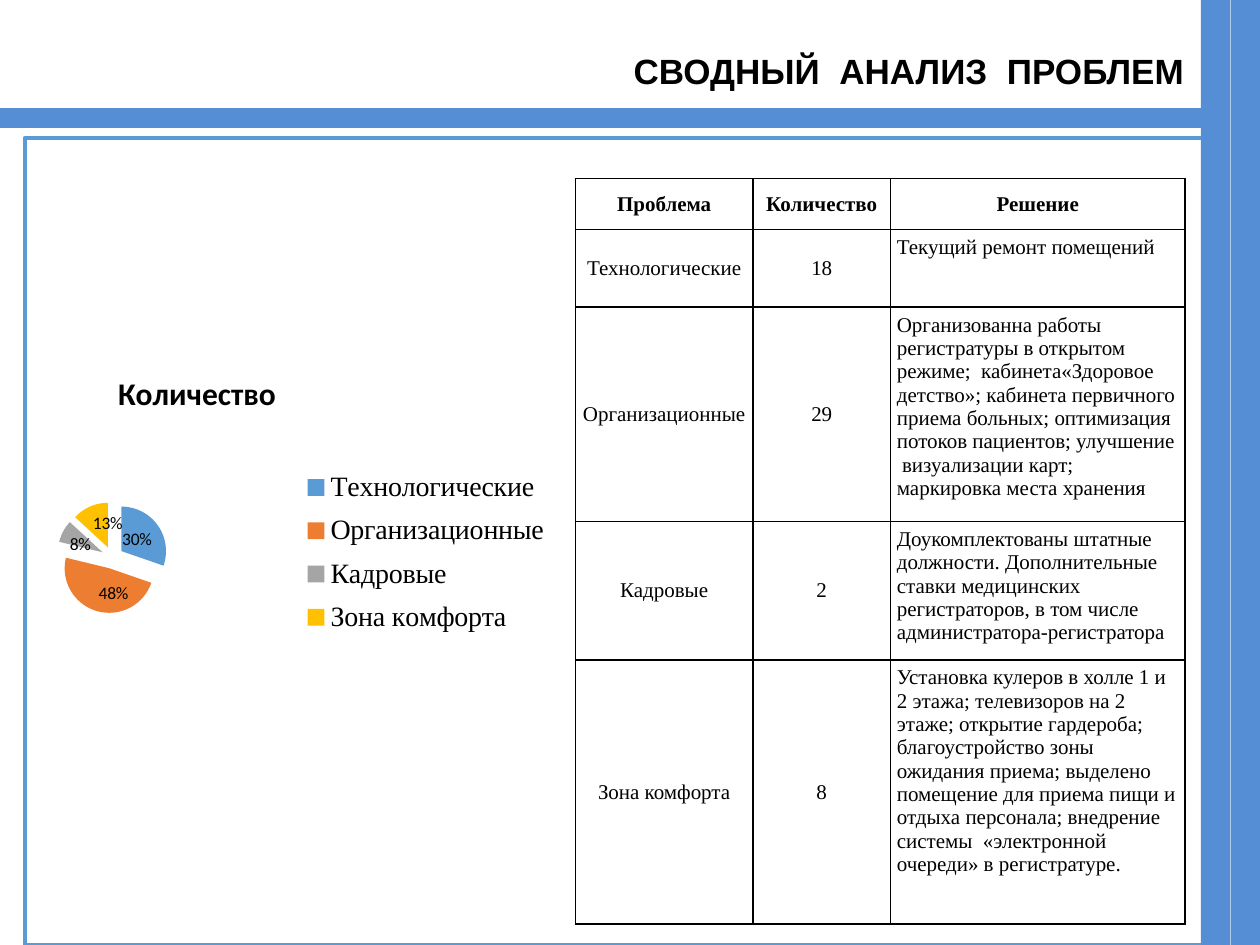
from dataclasses import dataclass

from lxml.etree import SubElement
from pptx import Presentation
from pptx.chart.data import CategoryChartData
from pptx.dml.color import RGBColor
from pptx.enum.chart import XL_CHART_TYPE, XL_LABEL_POSITION, XL_LEGEND_POSITION
from pptx.enum.shapes import MSO_SHAPE
from pptx.enum.text import MSO_ANCHOR, PP_ALIGN
from pptx.oxml import parse_xml
from pptx.oxml.ns import nsdecls, qn
from pptx.util import Cm, Pt


@dataclass(frozen=True)
class Theme:
    black: str = "000000"
    white: str = "FFFFFF"
    bar: str = "558ED5"
    frame: str = "5B9BD5"
    slices: tuple = ("5B9BD5", "ED7D31", "A5A5A5", "FFC000")
    heading_font: str = "Arial"
    chart_font: str = "Calibri"
    serif_font: str = "Times New Roman"
    heading_size: int = 20
    chart_title_size: int = 18
    legend_size: int = 16
    table_size: int = 12
    label_size: int = 10


THEME = Theme()
CATEGORIES = ["Технологические", "Организационные", "Кадровые", "Зона комфорта"]
SHARES = [30, 48, 8, 13]
COUNTS = ["18", "29", "2", "8"]
SOLUTIONS = [
    "Текущий ремонт помещений",
    "Организованна работы регистратуры в открытом режиме;  кабинета«Здоровое "
    "детство»; кабинета первичного приема больных; оптимизация потоков пациентов; "
    "улучшение  визуализации карт; маркировка места хранения",
    "Доукомплектованы штатные должности. Дополнительные ставки медицинских  "
    "регистраторов, в том числе администратора-регистратора",
    "Установка кулеров в холле 1 и 2 этажа; телевизоров на 2 этаже; открытие "
    "гардероба; благоустройство зоны ожидания приема; выделено помещение для "
    "приема пищи и отдыха персонала; внедрение системы  «электронной очереди» "
    "в регистратуре.",
]
COLUMN_WIDTHS = [3.58, 2.77, 5.94]
ROW_HEIGHTS = [1.03, 1.56, 4.32, 2.79, 5.33]


def style_font(font, name, size, bold=False):
    font.name = name
    font.size = Pt(size)
    font.bold = bold
    font.color.rgb = RGBColor.from_string(THEME.black)


def write_text(text_frame, text, font=THEME.serif_font, size=THEME.table_size,
               bold=False, align=PP_ALIGN.LEFT):
    paragraph = text_frame.paragraphs[0]
    paragraph.alignment = align
    run = paragraph.add_run()
    run.text = text
    style_font(run.font, font, size, bold)


def set_margins(target, margin):
    target.margin_left = target.margin_right = margin
    target.margin_top = target.margin_bottom = margin


def add_title(slide, text):
    title = slide.shapes.title
    title.left, title.top, title.width, title.height = Cm(10.9), Cm(0.91), Cm(13.1), Cm(1.04)
    set_margins(title.text_frame, Cm(0.13))
    title.text_frame.vertical_anchor = MSO_ANCHOR.MIDDLE
    write_text(title.text_frame, text, font=THEME.heading_font,
               size=THEME.heading_size, bold=True, align=PP_ALIGN.RIGHT)


def add_rectangle(slide, left, top, width, height, fill, line=None):
    shape = slide.shapes.add_shape(
        MSO_SHAPE.RECTANGLE, Cm(left), Cm(top), Cm(width), Cm(height))
    shape.shadow.inherit = False
    shape.fill.solid()
    shape.fill.fore_color.rgb = RGBColor.from_string(fill)
    if line:
        shape.line.color.rgb = RGBColor.from_string(line)
        shape.line.width = Pt(2)
    else:
        shape.line.fill.background()


def add_borders(cell):
    properties = cell._tc.get_or_add_tcPr()
    for side in ("a:lnL", "a:lnR", "a:lnT", "a:lnB"):
        border = SubElement(properties, qn(side), w=str(Pt(1)))
        fill = SubElement(border, qn("a:solidFill"))
        SubElement(fill, qn("a:srgbClr"), val=THEME.black)


def add_problem_table(slide):
    rows = [("Проблема", "Количество", "Решение"), *zip(CATEGORIES, COUNTS, SOLUTIONS)]
    table = slide.shapes.add_table(
        len(rows), len(COLUMN_WIDTHS), Cm(11.6), Cm(3.6),
        Cm(sum(COLUMN_WIDTHS)), Cm(sum(ROW_HEIGHTS))).table
    for column, width in zip(table.columns, COLUMN_WIDTHS):
        column.width = Cm(width)
    for row_index, texts in enumerate(rows):
        table.rows[row_index].height = Cm(ROW_HEIGHTS[row_index])
        is_header = row_index == 0
        for column_index, text in enumerate(texts):
            cell = table.cell(row_index, column_index)
            is_solution = column_index == 2 and not is_header
            is_name = column_index == 0 and not is_header
            set_margins(cell, Cm(0.03 if is_name else 0.13))
            cell.vertical_anchor = MSO_ANCHOR.TOP if is_solution else MSO_ANCHOR.MIDDLE
            write_text(cell.text_frame, text, bold=is_header,
                       align=PP_ALIGN.LEFT if is_solution else PP_ALIGN.CENTER)
            add_borders(cell)
            cell.fill.background()


def set_layout(element, index, inner=False, **position):
    """Place a chart part by fractions of the chart area."""
    for old_layout in element.findall(qn("c:layout")):
        element.remove(old_layout)
    layout = parse_xml(f"<c:layout {nsdecls('c')}><c:manualLayout/></c:layout>")
    manual = layout[0]
    if inner:
        SubElement(manual, qn("c:layoutTarget"), val="inner")
    for axis in ("x", "y"):
        SubElement(manual, qn(f"c:{axis}Mode"), val="edge")
    for key, value in position.items():
        SubElement(manual, qn(f"c:{key}"), val=str(value))
    element.insert(index, layout)


def add_share_pie(slide):
    data = CategoryChartData()
    data.categories = CATEGORIES
    data.add_series("Количество", SHARES)
    chart = slide.shapes.add_chart(
        XL_CHART_TYPE.PIE, Cm(1.04), Cm(7.09), Cm(10.21), Cm(7.04), data).chart
    style_font(chart.font, THEME.chart_font, THEME.label_size)

    # Chart title and legend
    write_text(chart.chart_title.text_frame, "Количество", font=THEME.chart_font,
               size=THEME.chart_title_size, bold=True, align=PP_ALIGN.CENTER)
    title = chart.chart_title._element
    title.find(qn("c:overlay")).set("val", "1")
    set_layout(title, 1, x=0.12, y=0.04)
    chart.has_legend = True
    chart.legend.position = XL_LEGEND_POSITION.RIGHT
    chart.legend.include_in_layout = True
    style_font(chart.legend.font, THEME.serif_font, THEME.legend_size)
    set_layout(chart.legend._element, 1, x=0.51, y=0.31, w=0.49, h=0.53)

    # Exploded slices with percentages
    plot = chart.plots[0]
    plot.vary_by_categories = True
    set_layout(plot._element.getparent(), 0, inner=True, x=0.01, y=0.19, w=0.22, h=0.8)
    series = plot.series[0]
    for index, color in enumerate(THEME.slices):
        fill = series.points[index].format.fill
        fill.solid()
        fill.fore_color.rgb = RGBColor.from_string(color)
    first_point = series._element.find(qn("c:dPt"))
    first_point.addprevious(parse_xml(f'<c:explosion {nsdecls("c")} val="25"/>'))
    plot.has_data_labels = True
    labels = plot.data_labels
    labels.show_value = False
    labels.show_percentage = True
    labels.number_format = "0%"
    labels.number_format_is_linked = False
    labels.position = XL_LABEL_POSITION.INSIDE_END
    style_font(labels.font, THEME.chart_font, THEME.label_size)


def main():
    presentation = Presentation()
    presentation.slide_width, presentation.slide_height = Cm(25.4), Cm(19.05)
    slide = presentation.slides.add_slide(presentation.slide_layouts[5])
    add_title(slide, "СВОДНЫЙ  АНАЛИЗ  ПРОБЛЕМ")

    # Content frame and decorative bars
    add_rectangle(slide, 0.5, 2.78, 23.9, 16.27, THEME.white, line=THEME.frame)
    for left in (24.81, 24.21):
        add_rectangle(slide, left, 0, 0.59, 19.05, THEME.bar)
    add_rectangle(slide, 0, 2.18, 24.21, 0.4, THEME.bar)

    # Table and chart
    add_problem_table(slide)
    add_share_pie(slide)
    presentation.save("out.pptx")


if __name__ == "__main__":
    main()
